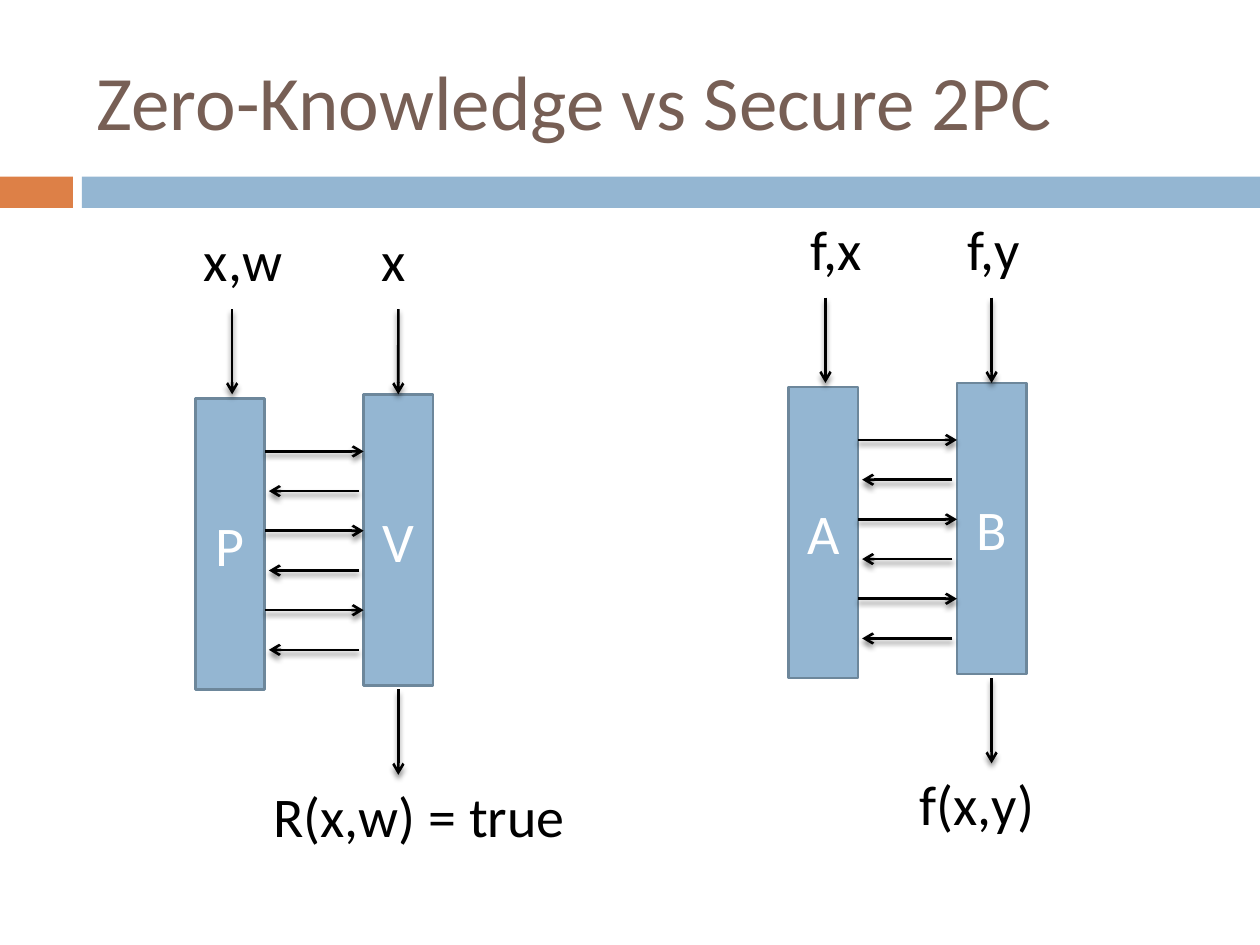
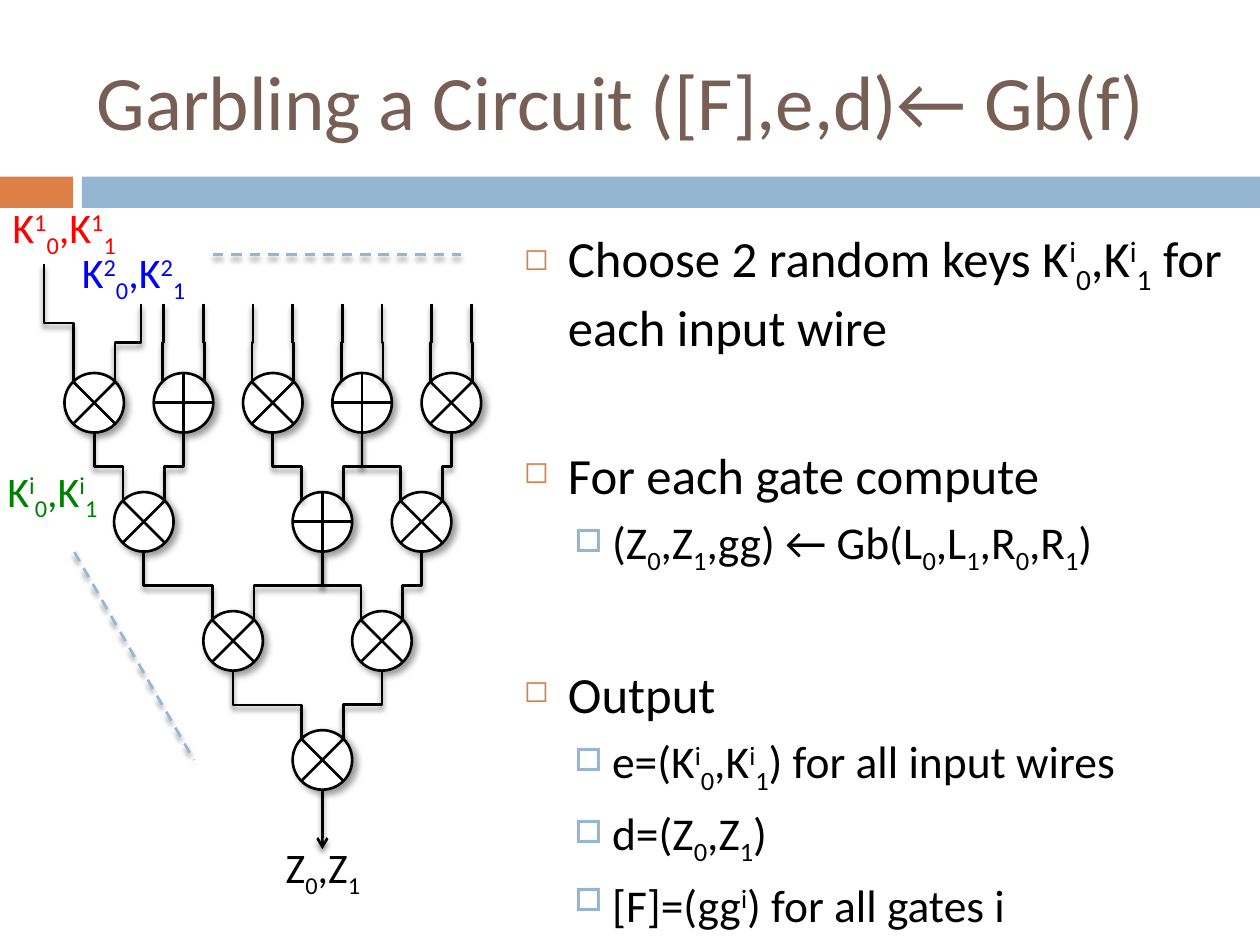
from lxml.etree import SubElement
from pptx import Presentation
from pptx.dml.color import RGBColor
from pptx.enum.dml import MSO_LINE
from pptx.enum.shapes import MSO_CONNECTOR, MSO_SHAPE
from pptx.enum.text import MSO_ANCHOR, PP_ALIGN
from pptx.oxml.ns import qn
from pptx.util import Cm, Pt

COLORS = {
    "orange": "DD8047", "blue": "94B6D2", "blue_edge": "6D879B", "title": "775F55",
    "black": "000000", "white": "FFFFFF", "red": "FF0000", "key_blue": "0000FF",
    "green": "008000",
}
FONT = "Calibri"
BASELINES = {"^": 30000, "_": -25000}
WIRE_SHADOW = dict(alpha=45, blur=3, distance=2.4, angle=90)
GATE_SHADOW = dict(alpha=40, blur=4, distance=3, angle=45)

PARTY_W, PARTY_H = 1.4, 5.87
RECEIVER_X, RECEIVER_Y = 3.39, -0.08
ARROW_LENGTH = 1.72
PROTOCOLS = [
    dict(origin=(3.94, 8.03), parties=("P", "V"),
         inputs=[("x,w", -0.08, 2.08), ("x", 3.5, 1.09)],
         result=("R(x,w) = true", 1.32, 6.45)),
    dict(origin=(15.9, 7.8), parties=("A", "B"),
         inputs=[("f,x", 0.18, 1.65), ("f,y", 3.35, 1.65)],
         result=("f(x,y)", 2.39, 3.33)),
]

GATE = 1.2
PORT = 0.18
ROW_STEP = 2.4
XOR, AND = MSO_SHAPE.FLOWCHART_OR, MSO_SHAPE.FLOWCHART_SUMMING_JUNCTION
GATE_ROWS = [
    [(1.8 * column, XOR if column % 2 else AND) for column in range(5)],
    [(1.0, AND), (4.6, XOR), (6.6, AND)],
    [(2.8, AND), (5.8, AND)],
    [(4.6, AND)],
]
GATE_SOURCES = [
    [(0, 1), (2, 3), (3, 4)],
    [(0, 1), (1, 2)],
    [(0, 1)],
]
KEY_LABELS = [
    ("K^1_0,K^1_1", -1.3, -3.58, 2.9, "red"),
    ("K^2_0,K^2_1", 0.1, -2.67, 2.9, "key_blue"),
    ("K^i_0,K^i_1", -1.4, 1.73, 2.51, "green"),
    ("Z_0,Z_1", 4.21, 9.32, 2.18, "black"),
]
ELLIPSES = [((0.2, 3.61), (2.61, 7.8)), ((2.99, -2.39), (8, -2.39))]

STEPS = [
    (0, "Choose 2 random keys K^i_0,K^i_1 for each input wire"),
    (0, "For each gate compute"),
    (1, "(Z_0,Z_1,gg) ← Gb(L_0,L_1,R_0,R_1)"),
    (0, "Output"),
    (1, "e=(K^i_0,K^i_1) for all input wires"),
    (1, "d=(Z_0,Z_1)"),
    (1, "[F]=(gg^i) for all gates i"),
]
STEP_LEVELS = [
    dict(size=29, space_before=7, bullet=("◻", "orange", 60, 0.89, 0.89)),
    dict(size=26, space_before=5.5, bullet=("□", "blue", 70, 1.78, 0.76)),
]
SECTION_GAP = 49.4


def rgb(name):
    return RGBColor.from_string(COLORS[name])


def split_baselines(text):
    runs, baseline = [], 0
    for letter in text:
        if letter in BASELINES:
            baseline = BASELINES[letter]
            continue
        if runs and runs[-1][1] == baseline:
            runs[-1][0] += letter
        else:
            runs.append([letter, baseline])
        baseline = 0
    return runs


def set_bullet(paragraph, mark, color, percent, margin, hanging):
    properties = paragraph._p.get_or_add_pPr()
    properties.set("marL", str(Cm(margin)))
    properties.set("indent", str(-Cm(hanging)))
    SubElement(SubElement(properties, qn("a:buClr")), qn("a:srgbClr"), val=COLORS[color])
    SubElement(properties, qn("a:buSzPct"), val=str(percent * 1000))
    SubElement(properties, qn("a:buChar"), char=mark)


def put_text(frame, text, size=32, color="black", align=PP_ALIGN.LEFT,
             anchor=MSO_ANCHOR.TOP, wrap=True, space_before=0, bullet=None):
    frame.word_wrap = wrap
    frame.vertical_anchor = anchor
    paragraph = frame.add_paragraph() if frame.text else frame.paragraphs[0]
    paragraph.alignment = align
    paragraph.space_before = Pt(space_before)
    if bullet:
        set_bullet(paragraph, *bullet)
    for piece, baseline in split_baselines(text):
        run = paragraph.add_run()
        run.text = piece
        run.font.name = FONT
        run.font.size = Pt(size)
        run.font.color.rgb = rgb(color)
        if baseline:
            run.font._element.set("baseline", str(baseline))


def add_frame(slide, x, y, width, height):
    return slide.shapes.add_textbox(Cm(x), Cm(y), Cm(width), Cm(height)).text_frame


def add_label(slide, text, x, y, width, height=1.62, **form):
    put_text(add_frame(slide, x, y, width, height), text, wrap=False, **form)


def cast_shadow(properties, alpha, blur, distance, angle):
    effects = properties.find(qn("a:effectLst"))
    if effects is None:
        effects = SubElement(properties, qn("a:effectLst"))
    shadow = SubElement(effects, qn("a:outerShdw"), blurRad=str(Pt(blur)),
                        dist=str(Pt(distance)), dir=str(angle * 60000), rotWithShape="0")
    tint = SubElement(shadow, qn("a:srgbClr"), val=COLORS["black"])
    SubElement(tint, qn("a:alpha"), val=str(alpha * 1000))


def add_block(slide, kind, x, y, width, height, fill, edge=None):
    block = slide.shapes.add_shape(kind, Cm(x), Cm(y), Cm(width), Cm(height))
    block.shadow.inherit = False
    block.fill.solid()
    block.fill.fore_color.rgb = rgb(fill)
    if edge:
        block.line.color.rgb = rgb(edge)
        block.line.width = Pt(1.5)
    else:
        block.line.fill.background()
    return block


def add_line(slide, start, end, color="black", arrow=False, dashed=False,
             kind=MSO_CONNECTOR.STRAIGHT):
    line = slide.shapes.add_connector(kind, *map(Cm, (*start, *end)))
    line.line.color.rgb = rgb(color)
    line.line.width = Pt(1.5)
    if dashed:
        line.line.dash_style = MSO_LINE.DASH
    if arrow:
        SubElement(line.line._get_or_add_ln(), qn("a:tailEnd"), type="arrow")
    cast_shadow(line._element.spPr, **WIRE_SHADOW)
    return line


def add_wire(slide, start, end):
    (x1, y1), (x2, y2) = start, end
    middle_x, middle_y = (x1 + x2) / 2, (y1 + y2) / 2
    rightward = x2 > x1
    half_drop = (y2 - y1) / 2 * (1 if rightward else -1)
    half_shift = abs(x2 - x1) / 2
    wire = add_line(slide, (middle_x + half_drop, middle_y - half_shift),
                    (middle_x - half_drop, middle_y + half_shift),
                    kind=MSO_CONNECTOR.ELBOW)
    turn = 270 if rightward else 90
    wire._element.spPr.find(qn("a:xfrm")).set("rot", str(turn * 60000))


def add_titled_slide(deck, title):
    slide = deck.slides.add_slide(deck.slide_layouts[6])
    for x, width, color in ((0, 1.47, "orange"), (1.65, 23.75, "blue")):
        add_block(slide, MSO_SHAPE.RECTANGLE, x, 3.56, width, 0.63, color)
    put_text(add_frame(slide, 1.7, 0.64, 22.66, 2.74), title, size=44, color="title",
             anchor=MSO_ANCHOR.MIDDLE)
    return slide


def draw_protocol(slide, origin, parties, inputs, result):
    x, y = origin
    party_spots = ((x, y), (x + RECEIVER_X, y + RECEIVER_Y))
    for name, spot in zip(parties, party_spots):
        receiver = add_block(slide, MSO_SHAPE.RECTANGLE, *spot, PARTY_W, PARTY_H,
                             "blue", "blue_edge")
        put_text(receiver.text_frame, name, color="white", align=PP_ALIGN.CENTER,
                 anchor=MSO_ANCHOR.MIDDLE)

    for message in range(6):
        height = y + 1.07 + 0.8 * message
        start, end = (3.3, 1.48) if message % 2 else (PARTY_W, RECEIVER_X)
        add_line(slide, (x + start, height), (x + end, height), arrow=True)

    receiver_middle = x + RECEIVER_X + PARTY_W / 2
    input_end = y + RECEIVER_Y
    for middle in (x + 0.74, receiver_middle):
        receiver_input = add_line(slide, (middle, input_end - ARROW_LENGTH),
                                  (middle, input_end), arrow=True)
    receiver_input.end_connect(receiver, 0)
    output_start = y + PARTY_H
    add_line(slide, (receiver_middle, output_start),
             (receiver_middle, output_start + ARROW_LENGTH), arrow=True)

    for text, offset, width in inputs:
        add_label(slide, text, x + offset, y - 3.6, width)
    text, offset, width = result
    add_label(slide, text, x + offset, output_start + ARROW_LENGTH, width)


def draw_circuit(slide, x, y):
    ports = (PORT, GATE - PORT)
    for row, gates in enumerate(GATE_ROWS):
        for offset, kind in gates:
            gate = add_block(slide, kind, x + offset, y + row * ROW_STEP, GATE, GATE,
                             "white", "black")
            cast_shadow(gate._element.spPr, **GATE_SHADOW)

    for column, (offset, _) in enumerate(GATE_ROWS[0]):
        tops = ((0.2, -1.4), (1.0, -1.4)) if column else ((-0.41, -2.19), (1.54, -1.4))
        for (top_x, top_y), port in zip(tops, ports):
            add_wire(slide, (x + offset + top_x, y + top_y), (x + offset + port, y + PORT))

    for row, row_sources in enumerate(GATE_SOURCES):
        bottom = y + row * ROW_STEP + GATE
        for (target, _), sources in zip(GATE_ROWS[row + 1], row_sources):
            for source, port in zip(sources, ports):
                source_x = x + GATE_ROWS[row][source][0] + GATE / 2
                add_wire(slide, (source_x, bottom),
                         (x + target + port, bottom + ROW_STEP - GATE + PORT))

    output_x = x + GATE_ROWS[-1][0][0] + GATE / 2
    output_y = y + 3 * ROW_STEP + GATE
    add_line(slide, (output_x, output_y), (output_x, output_y + 1.2), arrow=True)
    for (x1, y1), (x2, y2) in ELLIPSES:
        add_line(slide, (x + x1, y + y1), (x + x2, y + y2), color="blue", dashed=True)
    for text, left, top, width, color in KEY_LABELS:
        add_label(slide, text, x + left, y + top, width, 1.27, size=24, color=color)


def write_steps(slide, x, y, width, height):
    frame = add_frame(slide, x, y, width, height)
    for index, (level, text) in enumerate(STEPS):
        form = dict(STEP_LEVELS[level])
        if index and level == 0:
            form["space_before"] = SECTION_GAP
        put_text(frame, text, **form)
        frame.paragraphs[-1].level = level


def main():
    deck = Presentation()
    deck.slide_width, deck.slide_height = Cm(25.4), Cm(19.05)

    comparison = add_titled_slide(deck, "Zero-Knowledge vs Secure 2PC")
    for protocol in PROTOCOLS:
        draw_protocol(comparison, **protocol)

    garbling = add_titled_slide(deck, "Garbling a Circuit ([F],e,d)← Gb(f)")
    draw_circuit(garbling, 1.3, 7.52)
    write_steps(garbling, 10.31, 4.45, 15.09, 14.6)

    deck.save("out.pptx")


if __name__ == "__main__":
    main()
